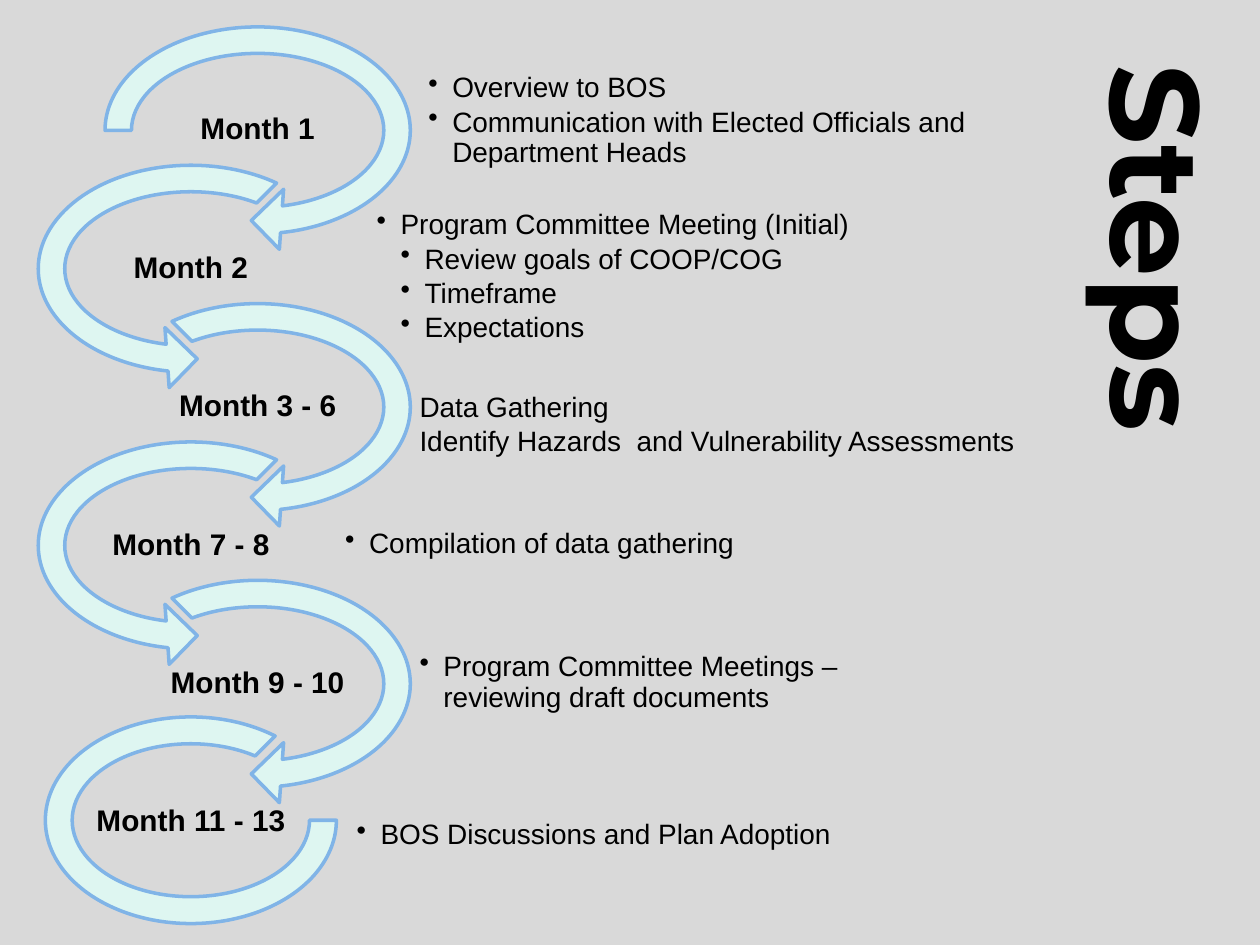
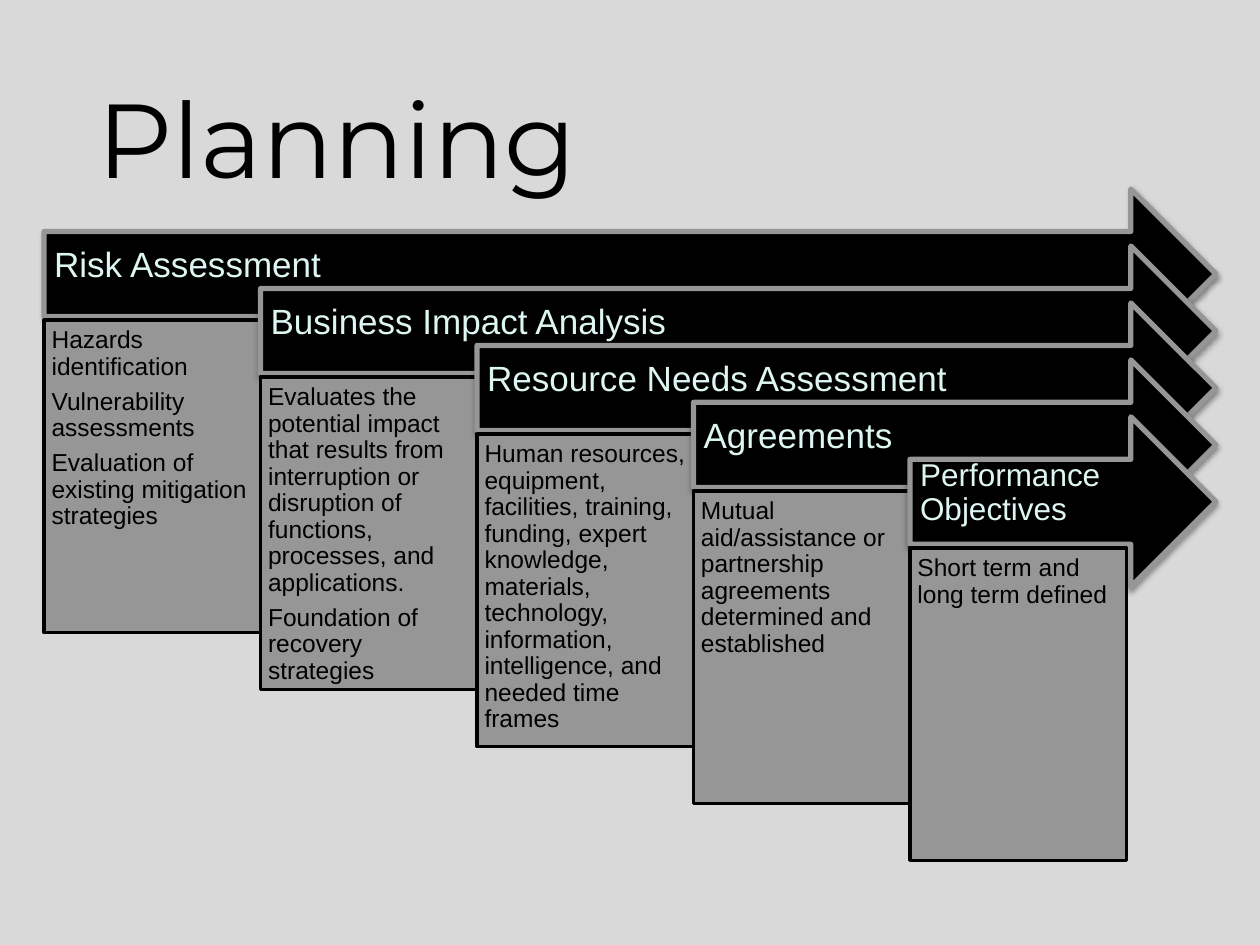
from pptx import Presentation
from pptx import util as u
from pptx.dml.color import RGBColor
from pptx.enum import shapes, text
from pptx.oxml import parse_xml
from pptx.oxml.ns import nsdecls, qn
from lxml import etree

COLORS = {
    "background": "D9D9D9",
    "ink": "000000",
    "mint": "DEF6F1",
    "sky": "80B4E7",
    "gray": "969696",
}
COLUMNS, ROWS = 100, 75
KIND = shapes.MSO_SHAPE
LEFT, CENTER = text.PP_ALIGN.LEFT, text.PP_ALIGN.CENTER
TOP, MIDDLE = text.MSO_ANCHOR.TOP, text.MSO_ANCHOR.MIDDLE

MONTH = {"size": 17, "bold": True, "align": CENTER, "after": 0.35}
TASK = {"size": 16, "after": 0.15}
PLAIN_TASK = {"size": 16, "after": 0, "spacing": 1.0}
ARROW_HEAD = {"size": 20, "color": "mint", "after": 0.35}
DETAIL = {"size": 14, "after": 0.35}


def rgb(name):
    return RGBColor.from_string(COLORS[name])


class Deck:
    """Holds the shared style and the current slide; lengths are grid columns and rows."""

    def __init__(self):
        self.prs = Presentation()
        self.prs.slide_width, self.prs.slide_height = u.Inches(10), u.Inches(7.5)
        fill = self.prs.slide_master.background.fill
        fill.solid()
        fill.fore_color.rgb = rgb("background")
        self.slide = None

    def box(self, left, top, width, height):
        col, row = self.prs.slide_width / COLUMNS, self.prs.slide_height / ROWS
        return [round(n) for n in (left * col, top * row, width * col, height * row)]

    def add_slide(self, title, box, size, bold=False, rotation=0):
        self.slide = self.prs.slides.add_slide(self.prs.slide_layouts[5])
        sp = self.slide.shapes.title
        sp.left, sp.top, sp.width, sp.height = self.box(*box)
        sp.rotation = rotation
        style = {"size": size, "bold": bold, "font": "Montserrat", "spacing": 1.0}
        self.fill_text(sp.text_frame, [title], style, margins=(0.1, 0.05, 0.1, 0.05))

    def fill_text(self, tf, lines, style, anchor=MIDDLE, margins=(0.01,) * 4,
                  bullets=False):
        """Fill a text frame; each line is a string or a (string, bullet level) pair."""
        frame = {"word_wrap": True, "auto_size": text.MSO_AUTO_SIZE.NONE,
                 "vertical_anchor": anchor}
        sides = ("margin_left", "margin_top", "margin_right", "margin_bottom")
        frame.update(zip(sides, map(u.Inches, margins)))
        for name, value in frame.items():
            setattr(tf, name, value)
        for i, line in enumerate(lines):
            words, level = (line, 1) if isinstance(line, str) else line
            p = tf.paragraphs[0] if i == 0 else tf.add_paragraph()
            self.paragraph(p, words, style)
            if bullets:
                self.bullet(p, level)

    def paragraph(self, p, words, style):
        size = style["size"]
        layout = {"alignment": style.get("align", LEFT),
                  "line_spacing": style.get("spacing", 0.9),
                  "space_before": u.Pt(0),
                  "space_after": u.Pt(size * style.get("after", 0))}
        for name, value in layout.items():
            setattr(p, name, value)
        r = p.add_run()
        r.text = words
        font = {"name": style.get("font", "Arial"), "size": u.Pt(size),
                "bold": style.get("bold", False)}
        for name, value in font.items():
            setattr(r.font, name, value)
        r.font.color.rgb = rgb(style.get("color", "ink"))

    def bullet(self, p, level):
        indent = u.Inches(0.19)
        props = p._p.get_or_add_pPr()
        props.set("marL", str(indent * level))
        props.set("indent", str(-indent))
        etree.SubElement(props, qn("a:buChar")).set("char", "•")

    def label(self, box, lines, style, **options):
        sp = self.slide.shapes.add_textbox(*self.box(*box))
        self.fill_text(sp.text_frame, lines, style, **options)

    def shape(self, kind, box, fill, line, weight, adjust=()):
        sp = self.slide.shapes.add_shape(kind, *self.box(*box))
        sp.shadow.inherit = False
        sp.fill.solid()
        sp.fill.fore_color.rgb = rgb(fill)
        sp.line.color.rgb = rgb(line)
        sp.line.width = u.Pt(weight)
        for i, value in enumerate(adjust):
            sp.adjustments[i] = value
        return sp

    def drop_shadow(self, sp):
        effects = sp._element.spPr.find(qn("a:effectLst"))
        effects.append(parse_xml(
            f'<a:outerShdw {nsdecls("a")} blurRad="{u.Pt(3.1)}" dist="{u.Pt(1.6)}" '
            f'dir="5400000" rotWithShape="0"><a:srgbClr val="{COLORS["ink"]}">'
            '<a:alpha val="38000"/></a:srgbClr></a:outerShdw>'))


def steps_slide(deck):
    deck.add_slide("Steps", (59, 31, 66.2, 12.5), 72, bold=True, rotation=90)
    # month, label width, task box (left, top, width), bulleted, tasks
    steps = [
        ("Month 1", 10.6, (33.9, 5.8, 51), True,
         ["Overview to BOS",
          "Communication with Elected Officials and Department Heads"]),
        ("Month 2", 10.6, (29.8, 18.2, 51.8), True,
         ["Program Committee Meeting (Initial)", ("Review goals of COOP/COG", 2),
          ("Timeframe", 2), ("Expectations", 2)]),
        ("Month 3 - 6", 16.9, (33.2, 29.8, 52.6), False,
         ["Data Gathering", "Identify Hazards  and Vulnerability Assessments"]),
        ("Month 7 - 8", 15.9, (27.3, 39.4, 42.7), True,
         ["Compilation of data gathering"]),
        ("Month 9 - 10", 15.3, (33.2, 50.4, 40.4), True,
         ["Program Committee Meetings – reviewing draft documents"]),
        ("Month 11 - 13", 20.9, (28.2, 62.5, 39.2), True,
         ["BOS Discussions and Plan Adoption"]),
    ]
    arc_width, arc_height, pitch = 26.9, 19.1, 10.98
    look = ("mint", "sky", 2)
    for i, (month, width, (left, top, span), bulleted, tasks) in enumerate(steps):
        arc_top = 0.8 + i * pitch
        arc_left = 1.7 if i % 2 else 7
        center = arc_left + arc_width / 2
        arc = (arc_left, arc_top, arc_width, arc_height)
        if i == len(steps) - 1:
            deck.shape(KIND.BLOCK_ARC, (3.6, 56.9, 23.1, 16.4), *look, (0, 189, 0.13))
        elif i % 2:
            deck.shape(KIND.LEFT_CIRCULAR_ARROW, arc, *look,
                       (0.11, 11.42, 63, 189, 0.125))
        else:
            start = 135 if i else 108
            deck.shape(KIND.CIRCULAR_ARROW, arc, *look,
                       (0.11, 11.42, 45, start, 0.125))
        deck.label((left, top, span, 7.6), tasks, TASK if bulleted else PLAIN_TASK,
                   bullets=bulleted)
        deck.label((center - width / 2, arc_top + 6.9, width, 5.3), [month], MONTH)


def planning_slide(deck):
    deck.add_slide("Planning", (6.7, 6.7, 85, 8.3), 60)
    stages = [
        ("Risk Assessment",
         ["Hazards identification", "Vulnerability assessments",
          "Evaluation of existing mitigation strategies"]),
        ("Business Impact Analysis",
         ["Evaluates the potential impact that results from interruption or "
          "disruption of functions, processes, and applications.",
          "Foundation of recovery strategies"]),
        ("Resource Needs Assessment",
         ["Human resources, equipment, facilities, training, funding, expert "
          "knowledge, materials, technology, information, intelligence, and "
          "needed time frames"]),
        ("Agreements",
         ["Mutual aid/assistance or partnership agreements determined and "
          "established"]),
        ("Performance Objectives", ["Short term and long term defined"]),
    ]
    arrow_end, card_width = 96.5, 17.18
    for i, (stage, details) in enumerate(stages):
        left, top = 3.5 + i * card_width, 15 + i * 4.52
        arrow = deck.shape(KIND.RIGHT_ARROW, (left, top, arrow_end - left, 13.5),
                           "ink", "gray", 3, (0.5, 0.5))
        deck.drop_shadow(arrow)
        size = 18 if stage == stages[-1][0] else 20
        deck.fill_text(arrow.text_frame, [stage], {**ARROW_HEAD, "size": size},
                       margins=(0.08, 0.08, 0.28, 0.21))
        card = deck.shape(KIND.RECTANGLE, (left, top + 10.4, card_width, 24.8),
                          "gray", "ink", 2)
        deck.fill_text(card.text_frame, details, DETAIL, anchor=TOP,
                       margins=(0.06,) * 4)


def main():
    deck = Deck()
    steps_slide(deck)
    planning_slide(deck)
    deck.prs.save("out.pptx")


if __name__ == "__main__":
    main()
